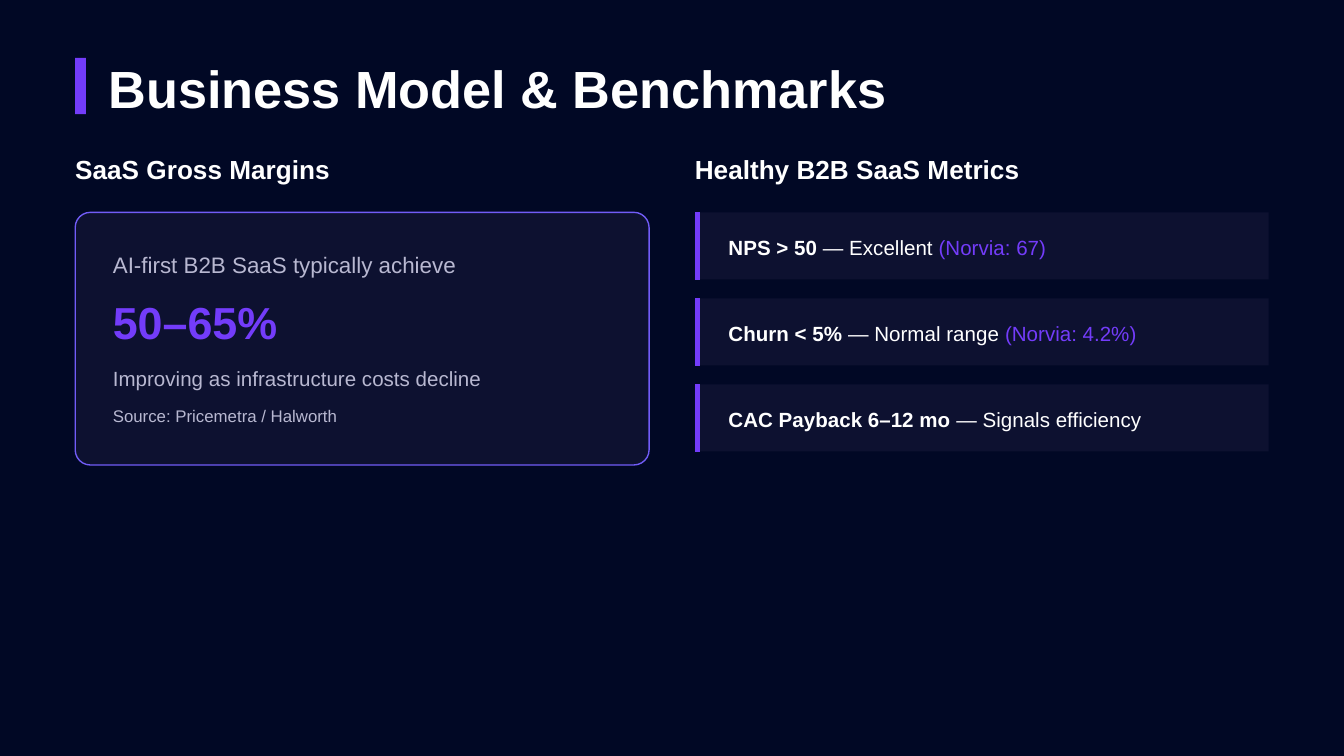
"""Build the business model and benchmarks slide."""
from pptx import Presentation
from pptx.dml.color import RGBColor
from pptx.enum.shapes import MSO_CONNECTOR, MSO_SHAPE
from pptx.oxml import parse_xml
from pptx.oxml.ns import nsdecls
from pptx.util import Inches, Pt


class Theme:
    font = "Arial"
    back = RGBColor.from_string("010825")
    panel = RGBColor.from_string("0D1130")
    edge = RGBColor.from_string("715CF7")
    accent = RGBColor.from_string("733CFA")
    white = RGBColor.from_string("FFFFFF")
    muted = RGBColor.from_string("B8B8D1")
    title, figure, head, lead, body, source = 28, 24, 14, 12, 11, 9


def block(kind, left, top, width, height, fill):
    shape = slide.shapes.add_shape(
        kind, Inches(left), Inches(top), Inches(width), Inches(height))
    shape.shadow.inherit = False
    shape.fill.solid()
    shape.fill.fore_color.rgb = fill
    shape.line.fill.background()
    return shape


def label(left, top, width, height, size, *parts):
    box = slide.shapes.add_textbox(
        Inches(left), Inches(top), Inches(width), Inches(height))
    frame = box.text_frame
    frame.word_wrap = True
    frame.margin_left = frame.margin_right = 0
    frame.margin_top = frame.margin_bottom = 0
    for text, color, bold in parts:
        run = frame.paragraphs[0].add_run()
        run.text = text
        run.font.name = Theme.font
        run.font.size = Pt(size)
        run.font.bold = bold
        run.font.color.rgb = color


deck = Presentation()
deck.slide_width, deck.slide_height = Inches(10), Inches(10 * 9 / 16)
slide = deck.slides.add_slide(deck.slide_layouts[6])
slide.background.fill.solid()
slide.background.fill.fore_color.rgb = Theme.back

left, right, top, width = 0.56, 5.17, 1.58, 4.27

block(MSO_SHAPE.RECTANGLE, left, 0.43, 0.08, 0.42, Theme.accent)
label(0.81, 0.42, 5.91, 0.45, Theme.title,
      ("Business Model & Benchmarks", Theme.white, True))

for x, text in ((left, "SaaS Gross Margins"), (right, "Healthy B2B SaaS Metrics")):
    label(x, 1.14, 4.36, 0.23, Theme.head, (text, Theme.white, True))

card = block(MSO_SHAPE.ROUNDED_RECTANGLE, left, top, width, 1.88, Theme.panel)
card.adjustments[0] = 0.06
card.line.color.rgb = Theme.edge
card.line.width = Pt(0.75)

lines = (
    (1.87, 0.19, Theme.lead, "AI-first B2B SaaS typically achieve", Theme.muted, False),
    (2.19, 0.39, Theme.figure, "50–65%", Theme.accent, True),
    (2.72, 0.17, Theme.body, "Improving as infrastructure costs decline", Theme.muted, False),
    (3.02, 0.15, Theme.source, "Source: Pricemetra / Halworth", Theme.muted, False),
)
for y, height, size, text, color, bold in lines:
    label(left + 0.28, y, 3.77, height, size, (text, color, bold))

metrics = (
    ("NPS > 50", " — Excellent ", "(Norvia: 67)"),
    ("Churn < 5%", " — Normal range ", "(Norvia: 4.2%)"),
    ("CAC Payback 6–12 mo", " — Signals efficiency", ""),
)
high, step = 0.5, 0.64
for row, (name, note, score) in enumerate(metrics):
    y = top + row * step
    block(MSO_SHAPE.RECTANGLE, right, y, width, high, Theme.panel)
    bar = slide.shapes.add_connector(
        MSO_CONNECTOR.STRAIGHT, Inches(right + 0.02), Inches(y),
        Inches(right + 0.02), Inches(y + high))
    bar.line.color.rgb = Theme.accent
    bar.line.width = Pt(3)
    bar._element.spPr.append(parse_xml(f"<a:effectLst {nsdecls('a')}/>"))
    parts = [(name, Theme.white, True), (note, Theme.white, False)]
    if score:
        parts.append((score, Theme.accent, False))
    label(right + 0.25, y + 0.17, 3.89, 0.17, Theme.body, *parts)

deck.save("out.pptx")
